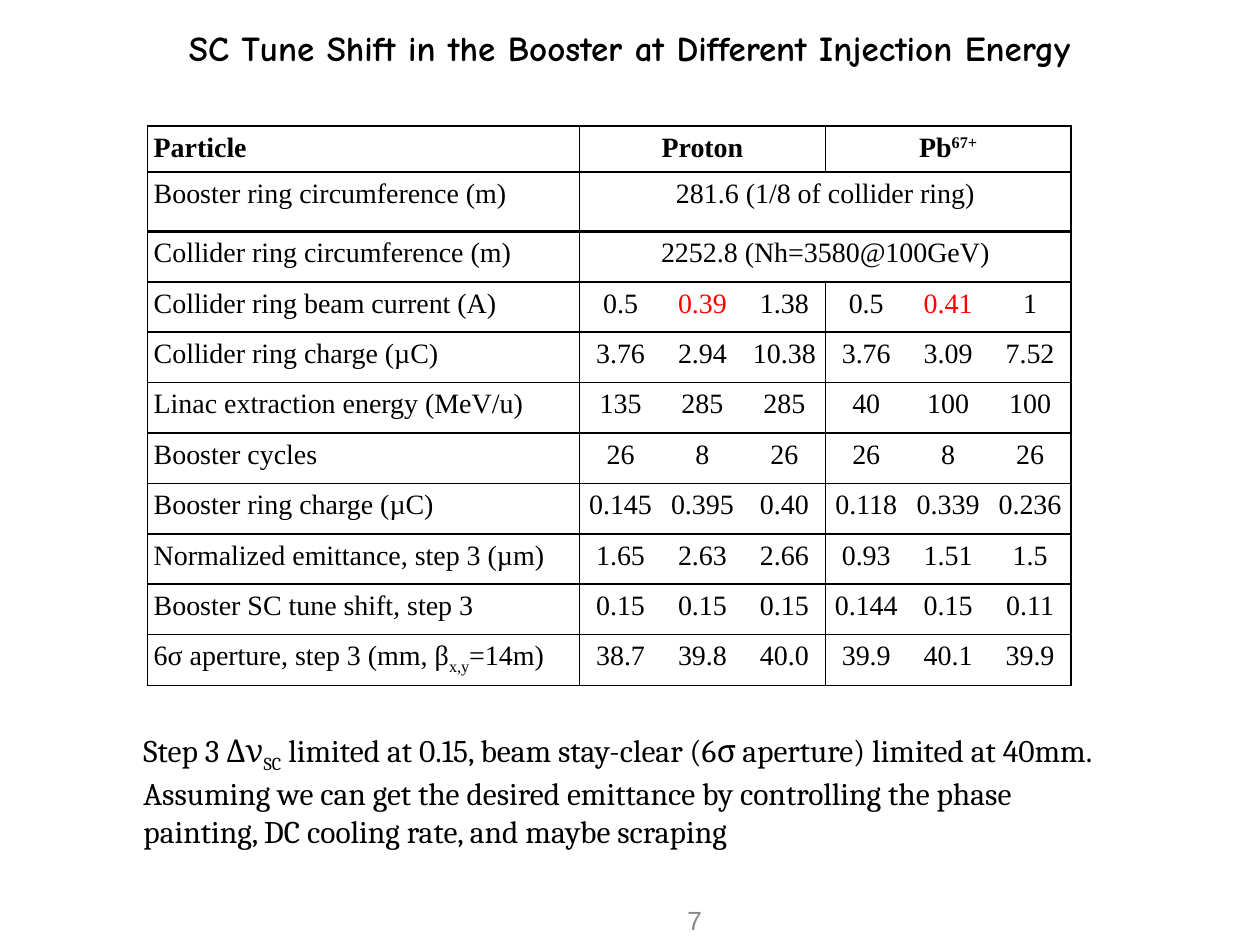
import pptx
import pptx.dml.color
import pptx.enum.text
import pptx.oxml
import pptx.oxml.ns
import pptx.util

WIDTH, HEIGHT = 10, 7.5
ALIGN = pptx.enum.text.PP_ALIGN
ANCHOR = pptx.enum.text.MSO_ANCHOR
BLACK, RED, GREY = "000000", "FF0000", "898989"
THIN, THICK = 1, 1.5
LABEL_WIDTH, VALUE_WIDTH = 3.43, 0.65
ROW_HEIGHTS = [0.32, 0.47] + [0.4] * 9
GROUP_STARTS = (0, 1, 4)
GROUP_ENDS = (0, 3, 6)
LAST_HEADING_ROW = 2

HEADINGS = [
    ("Particle", {1: (["Proton"], 3), 4: (["Pb", ("67+", 30)], 6)}),
    ("Booster ring circumference (m)", {1: (["281.6 (1/8 of collider ring)"], 6)}),
    ("Collider ring circumference (m)", {1: (["2252.8 (Nh=3580@100GeV)"], 6)}),
]
VALUES = [
    (["Collider ring beam current (A)"], "0.5 0.39 1.38 0.5 0.41 1"),
    (["Collider ring charge (µC)"], "3.76 2.94 10.38 3.76 3.09 7.52"),
    (["Linac extraction energy (MeV/u)"], "135 285 285 40 100 100"),
    (["Booster cycles"], "26 8 26 26 8 26"),
    (["Booster ring charge (µC)"], "0.145 0.395 0.40 0.118 0.339 0.236"),
    (["Normalized emittance, step 3 (µm)"], "1.65 2.63 2.66 0.93 1.51 1.5"),
    (["Booster SC tune shift, step 3"], "0.15 0.15 0.15 0.144 0.15 0.11"),
    (["6σ aperture, step 3 (mm, β", ("x,y", -25), "=14m)"],
     "38.7 39.8 40.0 39.9 40.1 39.9"),
]
HIGHLIGHTS = {"0.39", "0.41"}
NOTES = [
    ["Step 3 Δν", ("SC", -25),
     " limited at 0.15, beam stay-clear (6σ aperture) limited at 40mm."],
    ["Assuming we can get the desired emittance by controlling the phase "
     "painting, DC cooling rate, and maybe scraping"],
]


def color(value):
    return pptx.dml.color.RGBColor.from_string(value)


def place(left, top, width, height):
    shares = (left * WIDTH, top * HEIGHT, width * WIDTH, height * HEIGHT)
    return [pptx.util.Inches(length) for length in shares]


def write(para, pieces, font="Times New Roman", size=16, ink=BLACK,
          bold=False, align=ALIGN.LEFT):
    para.alignment = align
    for piece in pieces:
        text, baseline = (piece, 0) if isinstance(piece, str) else piece
        span = para.add_run()
        span.text = text
        span.font.name = font
        span.font.size = pptx.util.Pt(size)
        span.font.bold = bold
        span.font.color.rgb = color(ink)
        if baseline:
            span._r.get_or_add_rPr().set("baseline", str(baseline * 1000))


def add_text(page, area, lines, anchor=ANCHOR.TOP, grow=False, **style):
    frame = page.shapes.add_textbox(*place(*area)).text_frame
    frame.word_wrap = True
    frame.vertical_anchor = anchor
    if grow:
        frame.auto_size = pptx.enum.text.MSO_AUTO_SIZE.SHAPE_TO_FIT_TEXT
    for index, pieces in enumerate(lines):
        para = frame.add_paragraph() if index else frame.paragraphs[0]
        write(para, pieces, **style)


def set_borders(cell, **widths):
    properties = cell._tc.get_or_add_tcPr()
    for side in "LRTB":
        width = widths.get(side)
        line = pptx.oxml.parse_xml(
            f'<a:ln{side} {pptx.oxml.ns.nsdecls("a")}/>')
        if width:
            line.set("w", str(pptx.util.Pt(width)))
            fill = line.makeelement(pptx.oxml.ns.qn("a:solidFill"))
            ink = line.makeelement(pptx.oxml.ns.qn("a:srgbClr"), {"val": BLACK})
            fill.append(ink)
        else:
            fill = line.makeelement(pptx.oxml.ns.qn("a:noFill"))
        line.append(fill)
        properties.append(line)


def format_cell(cell, row, column, merged):
    margin = pptx.util.Inches(0.05)
    cell.margin_left = cell.margin_right = margin
    cell.margin_top = cell.margin_bottom = margin
    set_borders(
        cell,
        L=THIN if merged or column in GROUP_STARTS else None,
        R=THIN if merged or column in GROUP_ENDS else None,
        T=THICK if row <= LAST_HEADING_ROW + 1 else THIN,
        B=THICK if row <= LAST_HEADING_ROW else THIN,
    )
    cell.fill.background()


def fill_headings(table):
    for row, (label, groups) in enumerate(HEADINGS):
        bold = row == 0
        write(table.cell(row, 0).text_frame.paragraphs[0], [label], bold=bold)
        for first, (pieces, last) in groups.items():
            cell = table.cell(row, first)
            cell.merge(table.cell(row, last))
            write(cell.text_frame.paragraphs[0], pieces, bold=bold,
                  align=ALIGN.CENTER)


def fill_values(table):
    for row, (label, numbers) in enumerate(VALUES, len(HEADINGS)):
        write(table.cell(row, 0).text_frame.paragraphs[0], label)
        for column, number in enumerate(numbers.split(), 1):
            write(table.cell(row, column).text_frame.paragraphs[0], [number],
                  ink=RED if number in HIGHLIGHTS else BLACK,
                  align=ALIGN.CENTER)


def add_parameter_table(page):
    widths = [LABEL_WIDTH] + [VALUE_WIDTH] * 6
    area = (0.117, 1 / HEIGHT, sum(widths) / WIDTH, sum(ROW_HEIGHTS) / HEIGHT)
    table = page.shapes.add_table(
        len(ROW_HEIGHTS), len(widths), *place(*area)).table
    table.first_row = table.horz_banding = False
    for column, width in zip(table.columns, widths):
        column.width = pptx.util.Inches(width)
    for row, height in zip(table.rows, ROW_HEIGHTS):
        row.height = pptx.util.Inches(height)
    fill_headings(table)
    fill_values(table)
    for row in range(len(ROW_HEIGHTS)):
        for column in range(len(widths)):
            cell = table.cell(row, column)
            format_cell(cell, row, column, cell.is_merge_origin)


def main():
    deck = pptx.Presentation()
    deck.slide_width = pptx.util.Inches(WIDTH)
    deck.slide_height = pptx.util.Inches(HEIGHT)
    page = deck.slides.add_slide(deck.slide_layouts[6])
    add_text(page, (0.492, 0.947, 0.075, 0.053), [["7"]], anchor=ANCHOR.MIDDLE,
             font="Arial", size=15, ink=GREY, align=ALIGN.RIGHT)
    add_text(page, (0.05, 0.021, 0.9, 0.059),
             [["SC Tune Shift in the Booster at Different Injection Energy"]],
             anchor=ANCHOR.MIDDLE, font="Comic Neue", size=20, bold=True,
             align=ALIGN.CENTER)
    add_parameter_table(page)
    add_text(page, (0.104, 0.767, 0.783, 0.135), NOTES, grow=True,
             font="Cambria", size=18)
    deck.save("out.pptx")


if __name__ == "__main__":
    main()
